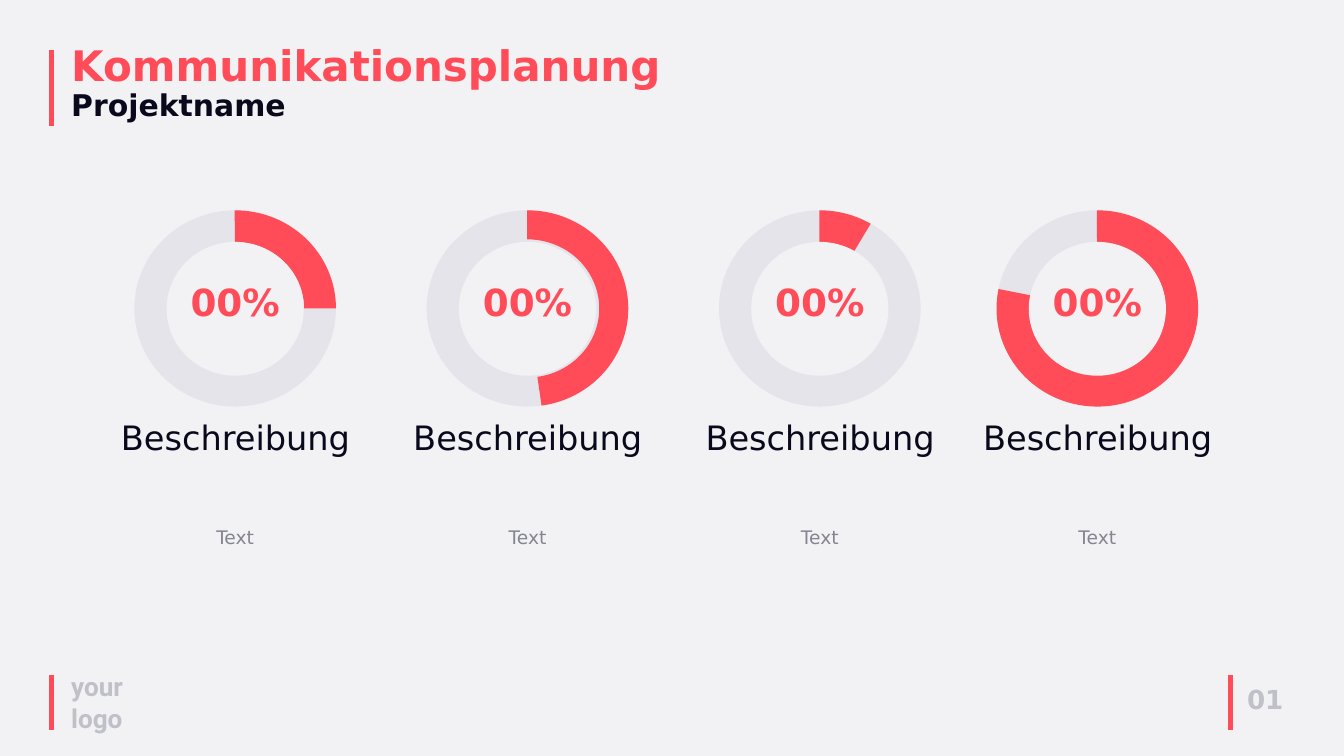
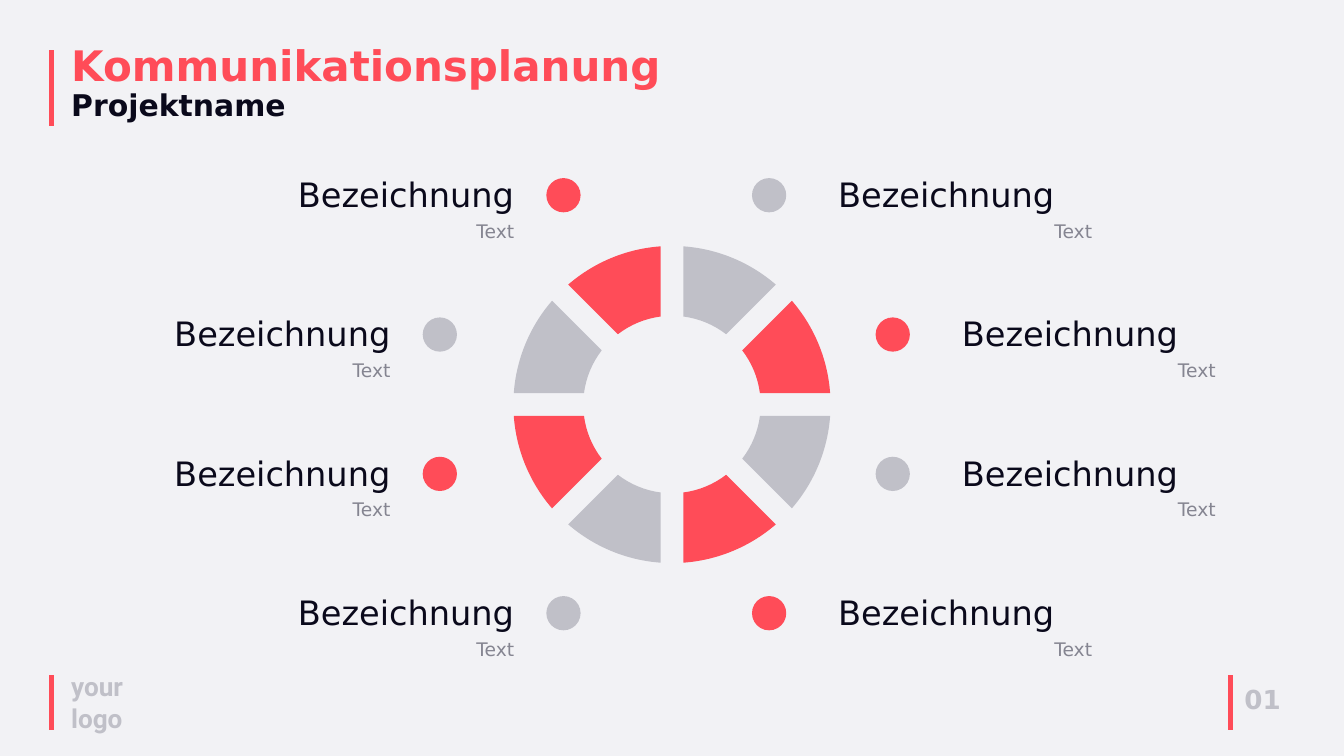
"""Build two communication planning slides: percentage rings and a segmented wheel."""
from dataclasses import dataclass
from math import asin, cos, pi, sin, tan

from lxml.etree import SubElement
from pptx import Presentation
from pptx.dml.color import RGBColor
from pptx.dml.fill import FillFormat
from pptx.enum.shapes import MSO_CONNECTOR, MSO_SHAPE
from pptx.enum.text import MSO_ANCHOR, MSO_AUTO_SIZE, PP_ALIGN
from pptx.oxml.ns import qn
from pptx.shapes.autoshape import Shape
from pptx.shapes.shapetree import GroupShapes, SlideShapes
from pptx.slide import Slide, SlideLayout
from pptx.text.text import TextFrame, _Paragraph as Paragraph
from pptx.util import Inches, Pt

WIDTH, HEIGHT = Inches(20), Inches(11.25)
COLUMNS, ROWS = 20, 11.25

RED, INK, GREY = "FF4C58", "0A091B", "C0C0C8"
PAPER, TRACK, MUTED = "F2F2F5", "E4E4EA", "858591"
SANS = "DejaVu Sans"

Canvas = SlideShapes | GroupShapes
Point = tuple[int, int]


@dataclass(frozen=True)
class Style:
    """Look of a run of text."""
    size: float
    color: str
    bold: bool = False
    font: str = SANS


@dataclass(frozen=True)
class Box:
    """Area in grid columns and rows."""
    left: float
    top: float
    width: float
    height: float

    def emu(self) -> tuple[int, int, int, int]:
        """Return left, top, width and height as slide lengths."""
        return col(self.left), row(self.top), col(self.width), row(self.height)


@dataclass(frozen=True)
class Bar:
    """Vertical accent line."""
    column: float
    top: float
    bottom: float


@dataclass(frozen=True)
class Ring:
    """Percentage ring with the end angle and thickness of its arc."""
    left: float
    end: float
    thickness: float


@dataclass(frozen=True)
class Side:
    """Legend side: label columns by row, and offsets from the label."""
    label_columns: tuple[float, ...]
    text_shift: float
    dot_shift: float
    colors: tuple[str, str]


HEADING = Style(45, RED, True)
PROJECT = Style(32, INK, True)
LOGO = Style(28, GREY, True, "Roboto")
NUMBER = Style(28, GREY, True)
PERCENT = Style(40, RED, True)
LABEL = Style(36, INK)
DETAIL = Style(20, MUTED)

BARS = (Bar(0.77, 0.75, 1.88), Bar(0.77, 10.05, 10.86), Bar(18.31, 10.05, 10.86))
RINGS = (
    Ring(2, 0.03, 0.162),
    Ring(6.35, 81.76, 0.148),
    Ring(10.7, 300.99, 0.181),
    Ring(14.83, 191.13, 0.17),
)
ARC_START = 269.73
ANGLE_UNIT = 0.6

SIDES = (
    Side((4.21, 2.37, 2.37, 4.21), -0.56, 3.92, (RED, GREY)),
    Side((12.25, 14.09, 14.09, 12.25), 0, -1.06, (GREY, RED)),
)
LEGEND_TOP, LEGEND_STEP = 2.54, 6.22 / 3

WHEEL_X, WHEEL_Y = 10, 6.02
OUTER, INNER, HALF_GAP = 2.36, 1.32, 0.17
SEGMENTS = 8


def col(count: float) -> int:
    """Return the width of a number of grid columns."""
    return round(WIDTH * count / COLUMNS)


def row(count: float) -> int:
    """Return the height of a number of grid rows."""
    return round(HEIGHT * count / ROWS)


def paint(fill: FillFormat, color: str) -> None:
    """Fill with a solid hex colour."""
    fill.solid()
    fill.fore_color.rgb = RGBColor.from_string(color)


def add_run(paragraph: Paragraph, wording: str, style: Style) -> None:
    """Append one styled run."""
    run = paragraph.add_run()
    run.text = wording
    run.font.name = style.font
    run.font.size = Pt(style.size)
    run.font.bold = style.bold
    paint(run.font.fill, style.color)


def fit_text(frame: TextFrame) -> None:
    """Wrap text from the top and let its frame grow."""
    frame.word_wrap = True
    frame.auto_size = MSO_AUTO_SIZE.SHAPE_TO_FIT_TEXT
    frame.vertical_anchor = MSO_ANCHOR.TOP


def add_text(canvas: Canvas, box: Box, wording: str, style: Style,
             align: PP_ALIGN = PP_ALIGN.LEFT) -> Shape:
    """Add a text box with one run."""
    text = canvas.add_textbox(*box.emu())
    fit_text(text.text_frame)
    paragraph = text.text_frame.paragraphs[0]
    paragraph.alignment = align
    add_run(paragraph, wording, style)
    return text


def finish(shape: Shape, color: str) -> None:
    """Give a shape a flat fill without line or shadow."""
    shape.shadow.inherit = False
    paint(shape.fill, color)
    shape.line.fill.background()


def add_flat(canvas: Canvas, kind: MSO_SHAPE, box: Box, color: str) -> Shape:
    """Add a flat preset shape."""
    shape = canvas.add_shape(kind, *box.emu())
    finish(shape, color)
    return shape


def furnish_layout(layout: SlideLayout, slide: Slide) -> None:
    """Put the background, accent bars and logo text on the layout."""
    paint(layout.background.fill, PAPER)
    title, *spare = layout.placeholders
    for placeholder in spare:
        placeholder.element.getparent().remove(placeholder.element)
    parts = [add_text(slide.shapes, Box(0.96, 9.93, 1.19, 1.04), "your logo", LOGO)]
    for bar in BARS:
        line = slide.shapes.add_connector(
            MSO_CONNECTOR.STRAIGHT, col(bar.column), row(bar.top),
            col(bar.column), row(bar.bottom))
        paint(line.line.fill, RED)
        line.line.width = Pt(5)
        SubElement(line.element.spPr, qn("a:effectLst"))
        parts.append(line)
    tree = title.element.getparent()
    for part in parts:
        tree.append(part.element)


def add_header(slide: Slide, number_box: Box) -> None:
    """Fill the title and add the slide number at the bottom of its box."""
    title = slide.shapes.title
    title.left, title.top, title.width, title.height = Box(0.96, 0.62, 9.21, 1.27).emu()
    fit_text(title.text_frame)
    paragraph = title.text_frame.paragraphs[0]
    paragraph.alignment = PP_ALIGN.LEFT
    paragraph.line_spacing = 0.9
    add_run(paragraph, "Kommunikationsplanung", HEADING)
    paragraph.add_line_break()
    add_run(paragraph, "Projektname", PROJECT)
    number = add_text(slide.shapes, number_box, "01", NUMBER)
    number.text_frame.auto_size = MSO_AUTO_SIZE.NONE
    number.text_frame.vertical_anchor = MSO_ANCHOR.BOTTOM


def add_ring(slide: Slide, ring: Ring) -> None:
    """Draw one percentage ring with its description."""
    canvas = slide.shapes.add_group_shape().shapes
    disc = Box(ring.left, 3.13, 3, 2.92)
    add_flat(canvas, MSO_SHAPE.OVAL, disc, TRACK)
    arc = add_flat(canvas, MSO_SHAPE.BLOCK_ARC, disc, RED)
    arc.adjustments[0] = ARC_START * ANGLE_UNIT
    arc.adjustments[1] = ring.end * ANGLE_UNIT
    arc.adjustments[2] = ring.thickness
    hole = add_flat(canvas, MSO_SHAPE.OVAL, Box(ring.left + 0.5, 3.62, 2, 1.95), PAPER)
    paint(hole.line.fill, PAPER)
    hole.line.width = Pt(3)
    center = PP_ALIGN.CENTER
    add_text(canvas, Box(ring.left + 0.58, 4.1, 1.84, 0.75), "00%", PERCENT, center)
    add_text(canvas, Box(ring.left - 0.63, 7.78, 4.26, 0.44), "Text", DETAIL, center)
    add_text(canvas, Box(ring.left - 0.62, 6.15, 4.25, 0.71), "Beschreibung", LABEL, center)


def arc_points(index: int, radius: float) -> list[Point]:
    """Return start, two Bézier controls and end of a clockwise segment arc."""
    sector = 2 * pi / SEGMENTS
    margin = asin(HALF_GAP / radius)
    start, end = index * sector + margin, (index + 1) * sector - margin
    reach = 4 / 3 * tan((end - start) / 4)
    offsets = ((start, 0), (start, reach), (end, -reach), (end, 0))
    return [(col(WHEEL_X + radius * (sin(angle) + pull * cos(angle))),
             row(WHEEL_Y - radius * (cos(angle) - pull * sin(angle))))
            for angle, pull in offsets]


def bend(shape: Shape, edge: int, controls: list[Point]) -> None:
    """Turn one straight edge of a freeform into a Bézier curve."""
    straight = list(shape.element.iter(qn("a:lnTo"), qn("a:cubicBezTo")))[edge]
    curve = straight.makeelement(qn("a:cubicBezTo"))
    for x, y in controls:
        SubElement(curve, qn("a:pt"), x=str(x - shape.left), y=str(y - shape.top))
    curve.append(straight[0])
    straight.getparent().replace(straight, curve)


def add_wheel(slide: Slide) -> None:
    """Draw the wheel of separated segments."""
    canvas = slide.shapes.add_group_shape().shapes
    for index in range(SEGMENTS):
        outer = arc_points(index, OUTER)
        inner = arc_points(index, INNER)[::-1]
        builder = canvas.build_freeform(*outer[0])
        builder.add_line_segments([outer[3], inner[0], inner[3]], close=True)
        segment = builder.convert_to_shape()
        bend(segment, 0, outer[1:3])
        bend(segment, 2, inner[1:3])
        finish(segment, (GREY, RED)[index % 2])


def add_legend(slide: Slide, side: Side) -> None:
    """Draw the four legend entries of one side."""
    right = PP_ALIGN.RIGHT
    for index, left in enumerate(side.label_columns):
        top = LEGEND_TOP + index * LEGEND_STEP
        canvas = slide.shapes.add_group_shape().shapes
        add_text(canvas, Box(left, top, 3.54, 0.71), "Bezeichnung", LABEL, right)
        add_text(canvas, Box(left + side.text_shift, top + 0.68, 4.1, 0.44),
                 "Text", DETAIL, right)
        add_flat(canvas, MSO_SHAPE.OVAL, Box(left + side.dot_shift, top + 0.11, 0.51, 0.51),
                 side.colors[index % 2])


def main() -> None:
    """Build and save both slides."""
    deck = Presentation()
    deck.slide_width, deck.slide_height = WIDTH, HEIGHT
    layout = deck.slide_layouts[5]

    rings_slide = deck.slides.add_slide(layout)
    furnish_layout(layout, rings_slide)
    add_header(rings_slide, Box(18.46, 10.12, 1.9, 0.57))
    for ring in RINGS:
        add_ring(rings_slide, ring)

    wheel_slide = deck.slides.add_slide(layout)
    add_header(wheel_slide, Box(18.42, 9.65, 1.9, 1.04))
    add_wheel(wheel_slide)
    for side in SIDES:
        add_legend(wheel_slide, side)

    deck.save("out.pptx")


if __name__ == "__main__":
    main()
